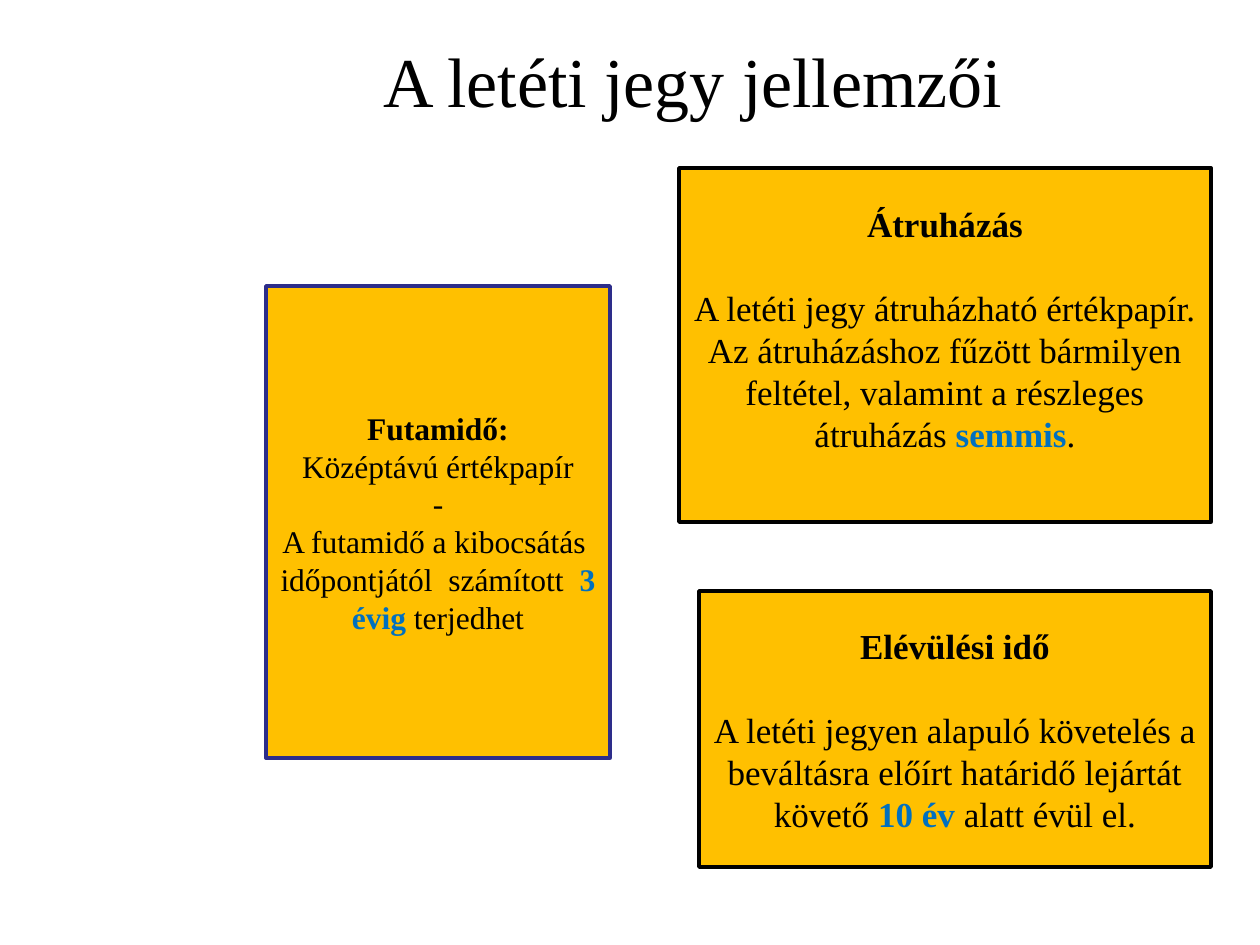
"""Build the slide on the features of the deposit note."""
from dataclasses import dataclass

from pptx import Presentation
from pptx import util as u
from pptx.dml.color import RGBColor
from pptx.enum import shapes, text

SCALE = 914400 / 126
FONT = "Times New Roman"
HUES = {"black": "000000", "gold": "FFC000", "navy": "2D2D8A", "blue": "0070C0"}
RECT = shapes.MSO_SHAPE.RECTANGLE
FLOW = shapes.MSO_SHAPE.FLOWCHART_PROCESS


@dataclass(frozen=True)
class Run:
    """A stretch of text with one format."""
    words: str
    bold: bool = False
    slant: bool = False
    hue: str = "black"


@dataclass(frozen=True)
class Card:
    """A filled box with a heading and body paragraphs."""
    kind: int
    left: int
    top: int
    width: int
    height: int
    edge: str
    size: int
    head: str
    body: tuple
    gap: int = 0
    base: int = 6


CARDS = (
    Card(RECT, 266, 286, 344, 472, "navy", 18, "Futamidő:", (
        (Run("Középtávú értékpapír"),),
        (Run("-", slant=True),),
        (Run("A futamidő a kibocsátás  időpontjától  számított  "),
         Run("3 évig ", bold=True, hue="blue"), Run("terjedhet")),
    )),
    Card(FLOW, 699, 591, 512, 276, "black", 20, "Elévülési idő", (
        (Run("A letéti jegyen alapuló követelés a beváltásra előírt "
             "határidő lejártát követő "),
         Run("10 év ", bold=True, hue="blue"), Run("alatt évül el.")),
    ), gap=24),
    Card(FLOW, 679, 168, 532, 354, "black", 20, "Átruházás", (
        (Run("A letéti jegy átruházható értékpapír."),),
        (Run("Az átruházáshoz fűzött bármilyen feltétel, valamint a "
             "részleges átruházás "),
         Run("semmis", bold=True, hue="blue"), Run(".")),
    ), gap=24, base=40),
)


def px(count: int) -> int:
    """Turn pixels into EMU."""
    return round(count * SCALE)


def tint(name: str) -> RGBColor:
    """Look up a colour by name."""
    return RGBColor.from_string(HUES[name])


def write(shape, lines, *, size: int, gap: int = 0, pitch: float = 0, base: int = 6) -> None:
    """Fill a shape with centred lines, with a gap after the first."""
    frame = shape.text_frame
    frame.word_wrap = True
    frame.vertical_anchor = text.MSO_ANCHOR.MIDDLE
    frame.margin_bottom = px(base)
    for index, line in enumerate(lines):
        para = frame.paragraphs[0] if index == 0 else frame.add_paragraph()
        para.alignment = text.PP_ALIGN.CENTER
        if pitch:
            para.line_spacing = u.Pt(pitch)
        if gap and index == 1:
            para.space_before = u.Pt(gap)
        for part in line:
            run = para.add_run()
            run.text = part.words
            font = run.font
            font.name, font.size = FONT, u.Pt(size)
            font.bold, font.italic = part.bold, part.slant
            font.color.rgb = tint(part.hue)


def draw(slide, card: Card) -> None:
    """Draw one card."""
    box = slide.shapes.add_shape(
        card.kind, *map(px, (card.left, card.top, card.width, card.height)))
    box.shadow.inherit = False
    box.fill.solid()
    box.fill.fore_color.rgb = tint("gold")
    box.line.color.rgb = tint(card.edge)
    box.line.width = u.Pt(2)
    lines = ((Run(card.head, bold=True),), *card.body)
    write(box, lines, size=card.size, gap=card.gap,
          pitch=card.size * 1.2, base=card.base)


def main() -> None:
    """Build and save the slide."""
    deck = Presentation()
    deck.slide_width, deck.slide_height = px(1260), px(945)
    slide = deck.slides.add_slide(deck.slide_layouts[6])
    title = slide.shapes.add_textbox(*map(px, (126, 0, 1134, 158)))
    write(title, ((Run("A letéti jegy jellemzői"),),), size=40)
    for card in CARDS:
        draw(slide, card)
    deck.save("out.pptx")


if __name__ == "__main__":
    main()
